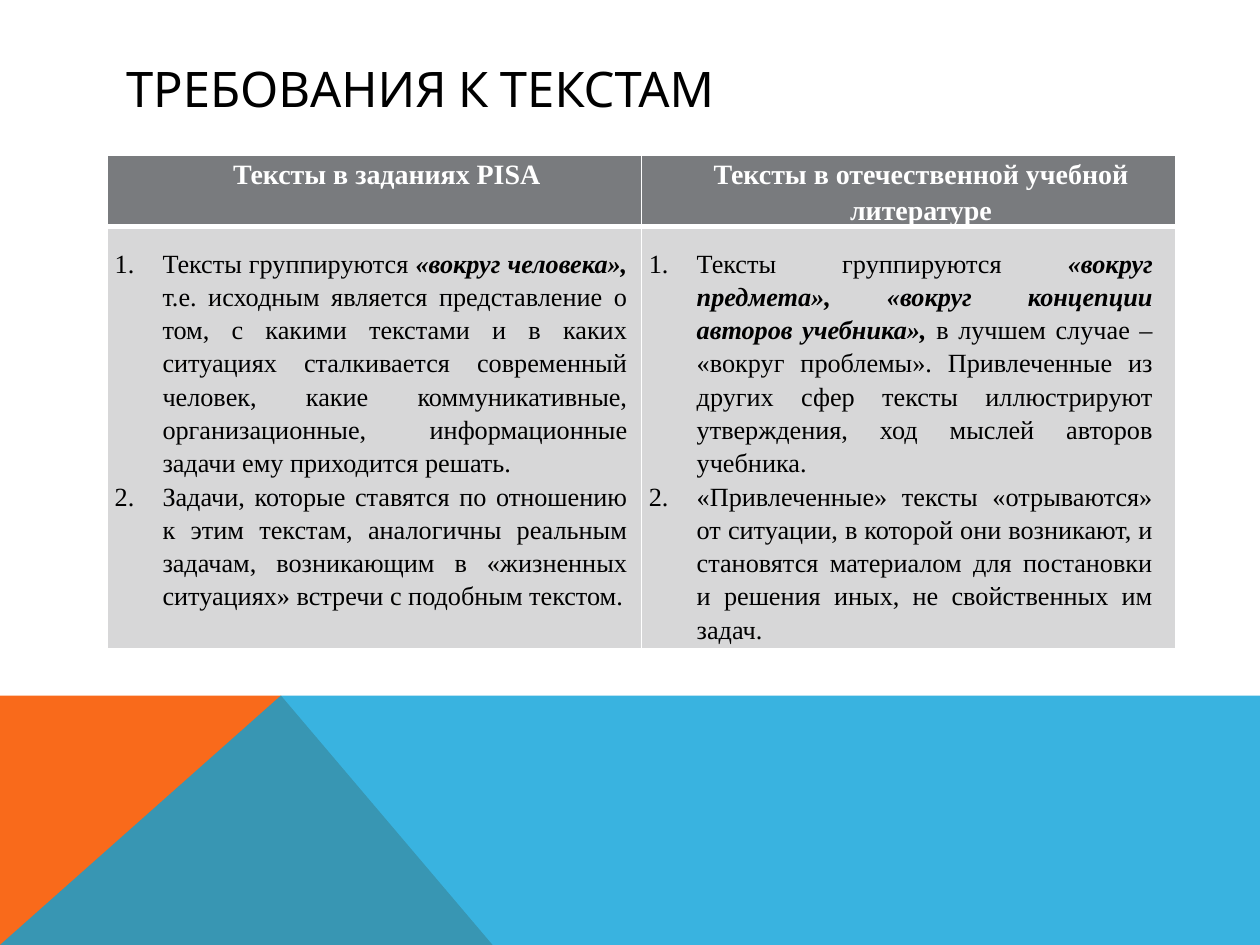
import pptx
import pptx.dml.color
import pptx.enum.text
import pptx.oxml
import pptx.oxml.ns
import pptx.util

Inches, Pt = pptx.util.Inches, pptx.util.Pt
ALIGN = pptx.enum.text.PP_ALIGN
ANCHOR = pptx.enum.text.MSO_ANCHOR
NS = pptx.oxml.ns.nsdecls("a")

THEME = {
    "orange": "F96A1B", "blue": "08A1D9", "header": "797B7E", "body": "D7D7D8",
    "white": "FFFFFF", "black": "000000",
    "title_font": "Karla", "table_font": "Times New Roman",
    "title_size": 28, "header_size": 16, "body_size": 15,
}


def rgb(name):
    return pptx.dml.color.RGBColor.from_string(THEME[name])


def add_run(p, text, color, **font):
    r = p.add_run()
    r.text = text
    r.font.color.rgb = rgb(color)
    for name, value in font.items():
        setattr(r.font, name, value)


prs = pptx.Presentation()
prs.slide_width, prs.slide_height = Inches(10), Inches(7.5)
s = prs.slides.add_slide(prs.slide_layouts[5])

# Coloured band along the bottom
bands = [
    ("orange", 100, [(0, 7.5), (0, 5.52), (2.23, 5.52), (3.91, 7.5)]),
    ("blue", 80, [(0, 7.5), (2.23, 5.52), (10, 5.52), (10, 7.5)]),
]
for color, opacity, points in bands:
    corners = [(Inches(x), Inches(y)) for x, y in points]
    builder = s.shapes.build_freeform(*corners[0])
    builder.add_line_segments(corners[1:], close=True)
    sp = builder.convert_to_shape()
    sp.shadow.inherit = False
    sp.fill.solid()
    sp.fill.fore_color.rgb = rgb(color)
    sp.line.fill.background()
    if opacity < 100:
        clr = sp.fill._xPr.find(".//" + pptx.oxml.ns.qn("a:srgbClr"))
        clr.append(pptx.oxml.parse_xml(f'<a:alpha {NS} val="{opacity * 1000}"/>'))

# Title
title = s.shapes.title
title.left, title.top = Inches(0.9), Inches(0.4)
title.width, title.height = Inches(8.22), Inches(0.6)
tf = title.text_frame
tf.vertical_anchor = ANCHOR.MIDDLE
p = tf.paragraphs[0]
p.alignment = ALIGN.LEFT
add_run(p, "ТРЕБОВАНИЯ К ТЕКСТАМ", "black",
        name=THEME["title_font"], size=Pt(THEME["title_size"]))

# Each column: heading, right margin of the body, numbered items as (text, emphasis)
columns = [
    ("Тексты в заданиях PISA", 0.11, [
        [("Тексты группируются ", False),
         ("«вокруг человека»,", True),
         (" т.е. исходным является представление о том, с какими текстами и в каких "
          "ситуациях сталкивается современный человек, какие коммуникативные, "
          "организационные, информационные задачи ему приходится решать.", False)],
        [("Задачи, которые ставятся по отношению к этим текстам, аналогичны реальным "
          "задачам, возникающим в «жизненных ситуациях» встречи с подобным текстом.", False)],
    ]),
    ("Тексты в отечественной учебной литературе", 0.18, [
        [("Тексты группируются ", False),
         ("«вокруг предмета», «вокруг концепции авторов учебника»,", True),
         (" в лучшем случае – «вокруг проблемы». Привлеченные из других сфер тексты "
          "иллюстрируют утверждения, ход мыслей авторов учебника.", False)],
        [("«Привлеченные» тексты «отрываются» от ситуации, в которой они возникают, и "
          "становятся материалом для постановки и решения иных, не свойственных им "
          "задач.", False)],
    ]),
]

table = s.shapes.add_table(2, len(columns), Inches(0.85), Inches(1.23),
                           Inches(8.48), Inches(3.86)).table
table.horz_banding = False
for row, height in zip(table.rows, (0.51, 3.35)):
    row.height = Inches(height)

for col, (heading, right, items) in enumerate(columns):
    table.columns[col].width = Inches(4.24)
    head, body = table.cell(0, col), table.cell(1, col)

    cell_formats = [
        (head, "header", 0, 0.06, {"L": 1, "R": 1, "T": 1, "B": 3}),
        (body, "body", 0.15, right, {"L": 1, "R": 1, "T": 3, "B": 1}),
    ]
    for cell, fill, top, margin_right, borders in cell_formats:
        margins = {"margin_left": 0.06, "margin_top": top,
                   "margin_right": margin_right, "margin_bottom": 0}
        for name, value in margins.items():
            setattr(cell, name, Inches(value))
        cell.fill.solid()
        cell.fill.fore_color.rgb = rgb(fill)
        tcPr = cell._tc.get_or_add_tcPr()
        for i, (side, width) in enumerate(borders.items()):
            tcPr.insert(i, pptx.oxml.parse_xml(
                f'<a:ln{side} {NS} w="{Pt(width)}"><a:solidFill>'
                f'<a:srgbClr val="{THEME["white"]}"/></a:solidFill></a:ln{side}>'))

    p = head.text_frame.paragraphs[0]
    p.alignment, p.line_spacing, p.space_after = ALIGN.CENTER, 1.15, Pt(6)
    p._p.get_or_add_pPr().set("marL", str(Inches(0.2)))
    add_run(p, heading, "white", name=THEME["table_font"],
            size=Pt(THEME["header_size"]), bold=True)

    tf = body.text_frame
    for i, item in enumerate(items):
        p = tf.add_paragraph() if i else tf.paragraphs[0]
        p.alignment, p.line_spacing = ALIGN.JUSTIFY, 1.15
        pPr = p._p.get_or_add_pPr()
        pPr.set("marL", str(Inches(0.38)))
        pPr.set("indent", str(-Inches(0.38)))
        pPr.append(pptx.oxml.parse_xml(f'<a:buAutoNum {NS} type="arabicPeriod"/>'))
        for text, emphasis in item:
            add_run(p, text, "black", name=THEME["table_font"],
                    size=Pt(THEME["body_size"]), bold=emphasis, italic=emphasis)

prs.save("out.pptx")
